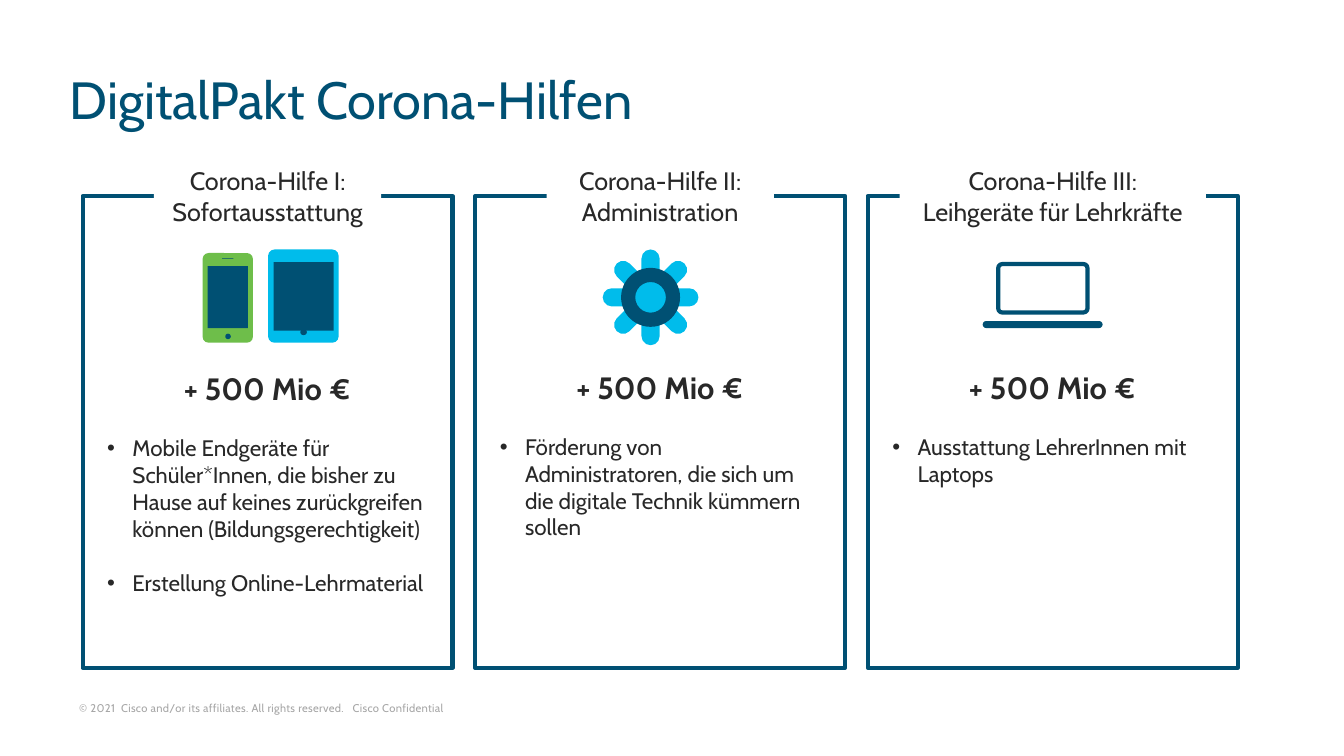
from lxml import etree
from pptx import Presentation
from pptx import util as u
from pptx.dml.color import RGBColor
from pptx.enum import shapes, text
from pptx.oxml.ns import qn

WIDE, HIGH = 26.67, 15
LEFT, TOP, PITCH, COL, TALL = 1.64, 3.89, 7.79, 7.34, 9.36
NAVY, CYAN, GREEN, INK, GREY, WHITE = (
    "005073", "00BCEB", "6EBE4A", "282828", "A6A6A6", "FFFFFF")
KIND = shapes.MSO_SHAPE
ALIGN = text.PP_ALIGN
ANCHOR = text.MSO_ANCHOR

# Heading lines, heading width, drop of the text, bullets
CARDS = [
    (["Corona-Hilfe I:", "Sofortausstattung"], 4.51, 0.03,
     ["Mobile Endgeräte für Schüler*Innen, die bisher zu Hause auf keines "
      "zurückgreifen können (Bildungsgerechtigkeit)",
      "Erstellung Online-Lehrmaterial"]),
    (["Corona-Hilfe II:", "Administration"], 4.51, 0,
     ["Förderung von Administratoren, die sich um die digitale Technik "
      "kümmern sollen"]),
    (["Corona-Hilfe III:", "Leihgeräte für Lehrkräfte"], 6.08, 0,
     ["Ausstattung LehrerInnen mit Laptops"]),
]


def color(code):
    return RGBColor.from_string(code)


def inches(*sizes):
    return [u.Inches(size) for size in sizes]


def form(slide, kind, box, fill=None, line=None, width=6, adjust=None, turn=0):
    """Add a preset shape; box is left, top, width, height."""
    shape = slide.shapes.add_shape(kind, *inches(*box))
    shape.shadow.inherit = False
    shape.rotation = turn
    if adjust is not None:
        shape.adjustments[0] = adjust
    if fill:
        shape.fill.solid()
        shape.fill.fore_color.rgb = color(fill)
    else:
        shape.fill.background()
    if line:
        shape.line.color.rgb = color(line)
        shape.line.width = u.Pt(width)
    else:
        shape.line.fill.background()
    return shape


def write(shape, lines, size, ink=INK, bold=False, frame=None, para=None):
    """Fill a shape with paragraphs and return them."""
    area = shape.text_frame
    area.word_wrap = True
    area.auto_size = text.MSO_AUTO_SIZE.NONE
    for name, value in (frame or {}).items():
        setattr(area, name, value)
    font = {"name": "Cabin", "size": u.Pt(size), "bold": bold}
    for place, line in enumerate(lines):
        item = area.add_paragraph() if place else area.paragraphs[0]
        for name, value in (para or {}).items():
            setattr(item, name, value)
        run = item.add_run()
        run.text = line
        for name, value in font.items():
            setattr(run.font, name, value)
        run.font.color.rgb = color(ink)
    return area.paragraphs


def label(slide, box, lines, size, **more):
    return write(slide.shapes.add_textbox(*inches(*box)), lines, size, **more)


def bullets(slide, box, lines):
    for place, item in enumerate(label(slide, box, lines, 32)):
        props = item._p.get_or_add_pPr()
        props.set("marL", str(u.Inches(0.5)))
        props.set("indent", str(-u.Inches(0.5)))
        etree.SubElement(props, qn("a:buFont"), typeface="Arial")
        etree.SubElement(props, qn("a:buChar"), char="•")
        if place:
            item.space_before = u.Pt(38.4)


def card(slide, left, head, width, drop, points):
    form(slide, KIND.RECTANGLE, (left, TOP, COL, TALL), line=NAVY)
    plate = form(slide, KIND.RECTANGLE,
                 (left + (COL - width) / 2, 3.24, width, 1.31), fill=WHITE)
    write(plate, head, 36, frame={"vertical_anchor": ANCHOR.TOP},
          para={"alignment": ALIGN.CENTER})
    label(slide, (left + 1.91, 7.26 + drop, 3.97, 0.84), ["+ 500 Mio €"], 44,
          bold=True)
    bullets(slide, (left + 0.39, 8.54 + drop, 6.57, 4.41), points)


def device(slide, body, screen, knob, fill, adjust):
    form(slide, KIND.ROUNDED_RECTANGLE, body, fill, adjust=adjust)
    form(slide, KIND.OVAL, knob, NAVY)
    form(slide, KIND.RECTANGLE, screen, NAVY)


def gear(slide, x, y):
    """Draw four crossed bars under a ring, centred on x, y."""
    wide, long, ring = 0.36, 1.9, 1.17
    for turn in range(0, 180, 45):
        form(slide, KIND.ROUNDED_RECTANGLE,
             (x - wide / 2, y - long / 2, wide, long), CYAN,
             adjust=0.5, turn=turn)
    form(slide, KIND.DONUT, (x - ring / 2, y - ring / 2, ring, ring), NAVY,
         adjust=0.24)


def laptop(slide):
    form(slide, KIND.ROUNDED_RECTANGLE, (19.5, 6.37, 2.38, 0.14), NAVY,
         adjust=0.5)
    form(slide, KIND.ROUNDED_RECTANGLE, (19.81, 5.24, 1.77, 0.96), line=NAVY,
         adjust=0.08)


def main():
    deck = Presentation()
    deck.slide_width, deck.slide_height = inches(WIDE, HIGH)
    slide = deck.slides.add_slide(deck.slide_layouts[5])

    title = slide.shapes.title
    title.left, title.top, title.width, title.height = inches(
        1.28, 1, 24.34, 2.13)
    write(title, ["DigitalPakt Corona-Hilfen"], 74.7, NAVY,
          frame={"vertical_anchor": ANCHOR.MIDDLE},
          para={"alignment": ALIGN.LEFT, "line_spacing": 0.8})

    for place, entry in enumerate(CARDS):
        card(slide, LEFT + place * PITCH, *entry)

    device(slide, (4.02, 5.02, 1, 1.78), (4.12, 5.28, 0.8, 1.23),
           (4.47, 6.62, 0.11, 0.11), GREEN, 0.12)
    form(slide, KIND.RECTANGLE, (4.41, 5.12, 0.22, 0.01), NAVY)
    device(slide, (5.32, 4.95, 1.4, 1.85), (5.43, 5.2, 1.19, 1.36),
           (5.96, 6.53, 0.13, 0.12), CYAN, 0.09)
    gear(slide, 12.91, 5.9)
    laptop(slide)

    side, edge = inches(0.18, 0.09)
    notice = label(
        slide, (1.39, 13.83, 9.92, 0.45),
        ["© 2021  Cisco and/or its affiliates. All rights reserved.   "
         "Cisco Confidential"], 16, ink=GREY,
        frame={"vertical_anchor": ANCHOR.BOTTOM, "margin_left": side,
               "margin_right": side, "margin_top": edge,
               "margin_bottom": edge})
    notice[0].runs[0].font._element.set("spc", "50")
    deck.save("out.pptx")


if __name__ == "__main__":
    main()
